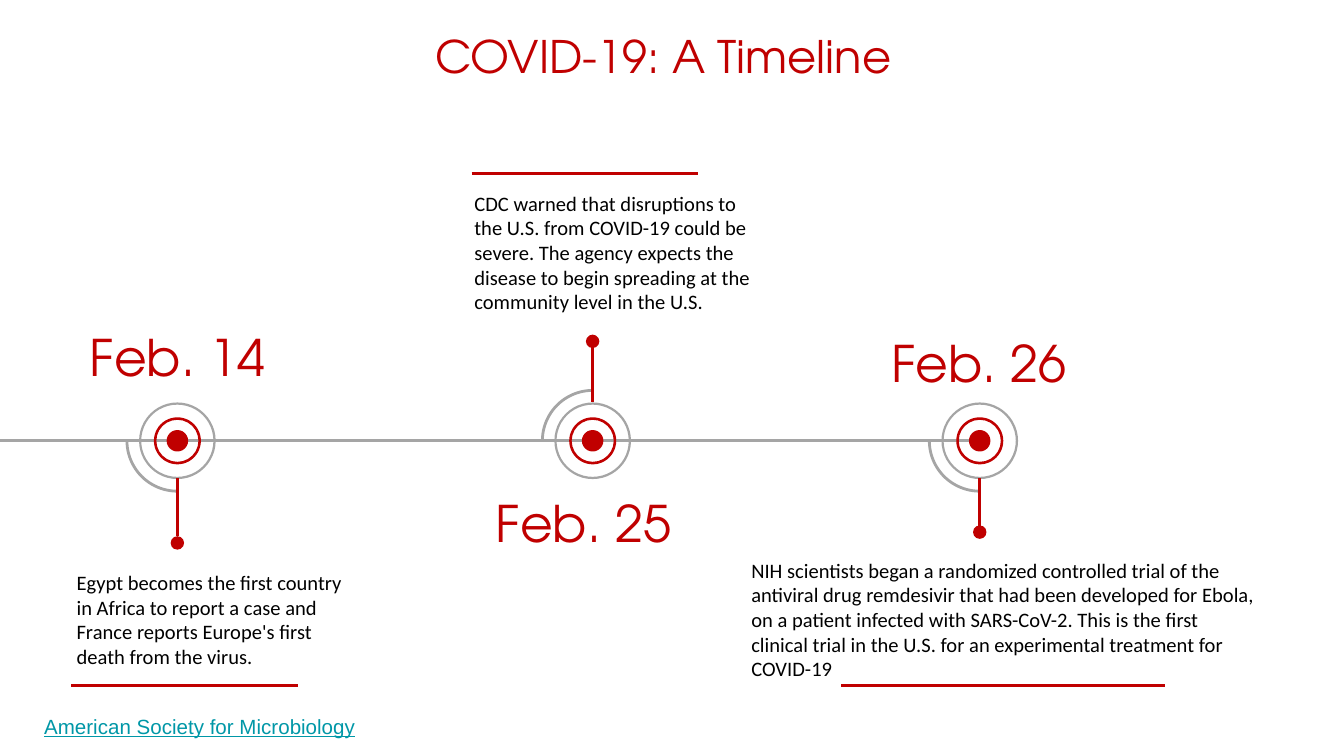
from pptx import Presentation
from pptx.dml.color import RGBColor
from pptx.enum.shapes import MSO_CONNECTOR, MSO_SHAPE
from pptx.enum.text import PP_ALIGN
from pptx.oxml.ns import qn
from pptx.util import Inches, Pt

RED = RGBColor(0xC0, 0x00, 0x00)
GRAY = RGBColor(0xA5, 0xA5, 0xA5)
BLACK = RGBColor(0x00, 0x00, 0x00)
TEAL = RGBColor(0x00, 0x97, 0xA7)
ARC, DONUT, OVAL = MSO_SHAPE.ARC, MSO_SHAPE.DONUT, MSO_SHAPE.OVAL
STRAIGHT = MSO_CONNECTOR.STRAIGHT
LEFT, CENTER = PP_ALIGN.LEFT, PP_ALIGN.CENTER
HEADING_FONT, BODY_FONT, SOURCE_FONT = "TeX Gyre Adventor", "Calibri", "Arial"

TITLE = "COVID-19: A Timeline"
SOURCE = "American Society for Microbiology"
# Boxes are (left, top, width, height); a rule is (left, right, y);
# a stem runs from the marker's edge to its far end.
EVENTS = [
    {"date": "Feb. 14", "x": 1.32, "rotation": 0,
     "stem": (3.56, 3.99), "dot_y": 4.04,
     "date_box": (0.5, 2.39, 1.64, 0.53), "text_box": (0.5, 4.2, 2.14, 0.78),
     "rule": (0.53, 2.22, 5.1),
     "text": "Egypt becomes the first country in Africa to report a case and "
             "France reports Europe's first death from the virus."},
    {"date": "Feb. 25", "x": 4.41, "rotation": 90,
     "stem": (2.99, 2.58), "dot_y": 2.54,
     "date_box": (3.55, 3.62, 1.58, 0.53), "text_box": (3.46, 1.38, 2.24, 0.96),
     "rule": (3.51, 5.19, 1.29),
     "text": "CDC warned that disruptions to the U.S. from COVID-19 could be "
             "severe. The agency expects the disease to begin spreading at the "
             "community level in the U.S."},
    {"date": "Feb. 26", "x": 7.29, "rotation": 0,
     "stem": (3.56, 3.96), "dot_y": 3.96,
     "date_box": (6.45, 2.43, 1.67, 0.53), "text_box": (5.52, 4.11, 3.9, 0.78),
     "rule": (6.26, 8.67, 5.1),
     "text": "NIH scientists began a randomized controlled trial of the antiviral "
             "drug remdesivir that had been developed for Ebola, on a patient "
             "infected with SARS-CoV-2. This is the first clinical trial in the "
             "U.S. for an experimental treatment for COVID-19"},
]
AXIS_Y = 3.28
AXIS_SEGMENTS = [(0, 1.26), (1.36, 4.33), (4.41, 7.37)]
ARC_SIZE, STEM_DOT_SIZE = 0.75, 0.1
# Shape, diameter, colour and ring thickness of each part of a marker
MARKER_PARTS = [(OVAL, 0.16, RED, None), (DONUT, 0.35, RED, 0.053),
                (DONUT, 0.57, GRAY, 0.029)]


def add_line(slide, x1, y1, x2, y2, color):
    line = slide.shapes.add_connector(
        STRAIGHT, Inches(x1), Inches(y1), Inches(x2), Inches(y2))
    line.line.color.rgb = color
    line.line.width = Pt(1.5)
    properties = line._element.spPr
    properties.append(properties.makeelement(qn("a:effectLst"), {}))


def add_centered(slide, kind, x, y, size):
    """Add a square-framed shape by its centre point."""
    shape = slide.shapes.add_shape(
        kind, Inches(x - size / 2), Inches(y - size / 2), Inches(size), Inches(size))
    shape.shadow.inherit = False
    return shape


def add_disc(slide, kind, x, y, size, color, thickness=None):
    disc = add_centered(slide, kind, x, y, size)
    disc.fill.solid()
    disc.fill.fore_color.rgb = color
    disc.line.fill.background()
    if thickness is not None:
        disc.adjustments[0] = thickness


def add_quarter_arc(slide, x, y, rotation):
    arc = add_centered(slide, ARC, x, y, ARC_SIZE)
    arc.adjustments[0] = 54.2  # about 90 degrees
    arc.adjustments[1] = 108.53  # about 180 degrees
    arc.rotation = rotation
    arc.fill.background()
    arc.line.color.rgb = GRAY
    arc.line.width = Pt(1.5)


def add_text(slide, box, text, font, size, color, align=LEFT, insets=(0.07, 0.04)):
    text_box = slide.shapes.add_textbox(*(Inches(length) for length in box))
    frame = text_box.text_frame
    frame.word_wrap = True
    frame.margin_left = frame.margin_right = Inches(insets[0])
    frame.margin_top = frame.margin_bottom = Inches(insets[1])
    frame.text = text
    paragraph = frame.paragraphs[0]
    paragraph.alignment = align
    run = paragraph.runs[0]
    run.font.name = font
    run.font.size = Pt(size)
    run.font.color.rgb = color
    return run


def add_event(slide, event):
    x = event["x"]
    add_quarter_arc(slide, x, AXIS_Y, event["rotation"])
    for kind, size, color, thickness in MARKER_PARTS:
        add_disc(slide, kind, x, AXIS_Y, size, color, thickness)
    start, end = event["stem"]
    add_line(slide, x, start, x, end, RED)
    add_disc(slide, OVAL, x, event["dot_y"], STEM_DOT_SIZE, RED)
    add_text(slide, event["date_box"], event["date"], HEADING_FONT, 27, RED, CENTER)
    add_text(slide, event["text_box"], event["text"], BODY_FONT, 11, BLACK)
    left, right, y = event["rule"]
    add_line(slide, left, y, right, y, RED)


def main():
    presentation = Presentation()
    presentation.slide_width = Inches(10)
    presentation.slide_height = Inches(10 * 9 / 16)
    slide = presentation.slides.add_slide(presentation.slide_layouts[6])

    for start, end in AXIS_SEGMENTS:
        add_line(slide, start, AXIS_Y, end, AXIS_Y, GRAY)
    for event in EVENTS:
        add_event(slide, event)
    add_text(slide, (1.95, 0.17, 5.97, 0.48), TITLE, HEADING_FONT, 24, RED, CENTER)
    source = add_text(slide, (0.23, 5.22, 2.64, 0.35), SOURCE, SOURCE_FONT, 11, TEAL,
                      insets=(0.1, 0.1))
    source.font.underline = True

    presentation.save("out.pptx")


if __name__ == "__main__":
    main()
